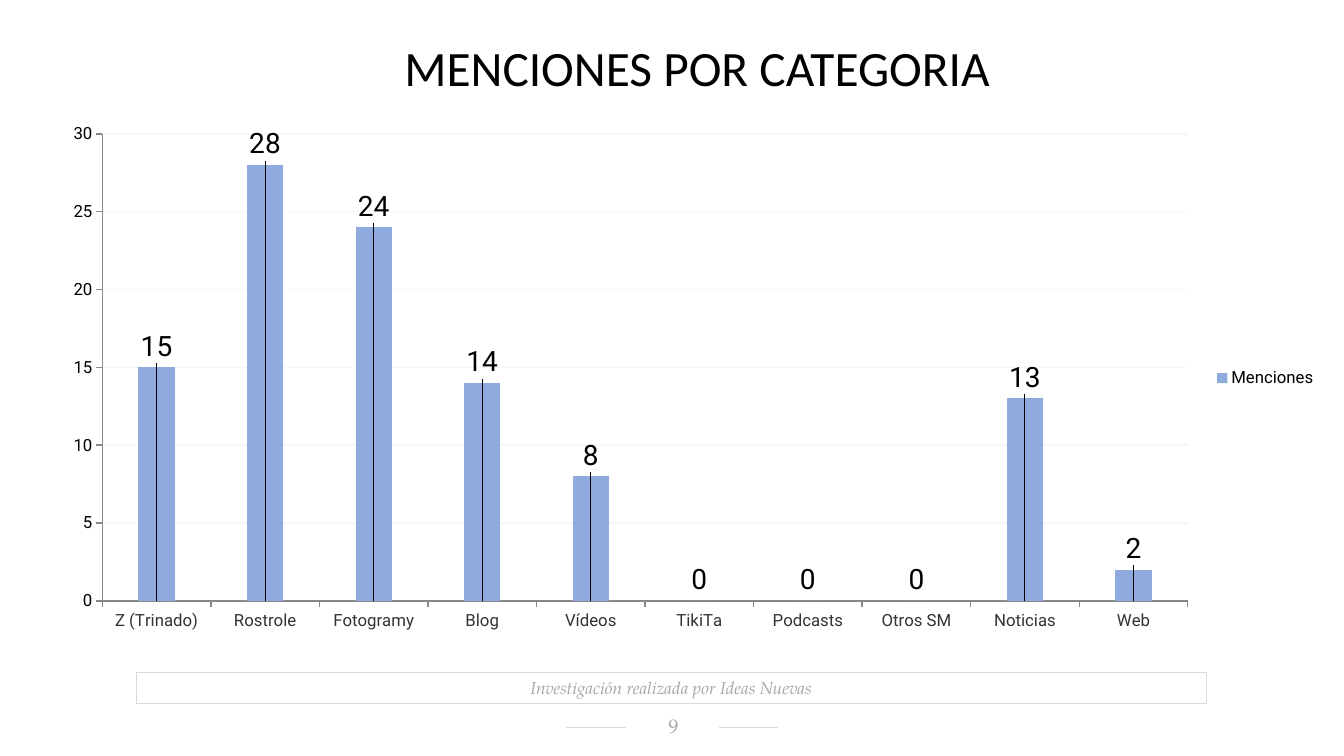
from lxml.etree import SubElement
from pptx import Presentation
from pptx.chart.data import CategoryChartData
from pptx.dml.color import RGBColor
from pptx.enum.chart import (XL_CHART_TYPE as ChartType, XL_LABEL_POSITION as LabelPos,
                             XL_LEGEND_POSITION as LegendPos, XL_TICK_LABEL_POSITION as TickPos,
                             XL_TICK_MARK as TickMark)
from pptx.enum.shapes import MSO_CONNECTOR as Connector, MSO_SHAPE as Shape
from pptx.enum.text import MSO_ANCHOR as Anchor, PP_ALIGN as Align
from pptx.oxml import parse_xml
from pptx.oxml.ns import nsdecls, qn
from pptx.util import Pt

SERIF = "TeX Gyre Pagella"
BLACK, GREY, RULE = "000000", "A6A6A6", "D9D9D9"
MENTIONS = {"Z (Trinado)": 15, "Rostrole": 28, "Fotogramy": 24, "Blog": 14, "Vídeos": 8,
            "TikiTa": 0, "Podcasts": 0, "Otros SM": 0, "Noticias": 13, "Web": 2}
AXIS_MAX = 30
PLOT_AREA = {"x": 0.043, "y": 0.038, "w": 0.848, "h": 0.884}  # shares of the chart box


def color(hex_code):
    return RGBColor.from_string(hex_code)


def style_font(font, size, name, hex_code, italic=None):
    font.size, font.name, font.italic = Pt(size), name, italic
    font.color.rgb = color(hex_code)


def style_line(line, hex_code, width):
    line.color.rgb = color(hex_code)
    line.width = Pt(width)


def write(box, text, size, name, hex_code, italic=None, anchor=Anchor.MIDDLE, indent=0):
    frame = box.text_frame
    frame.word_wrap = True
    frame.vertical_anchor = anchor
    para = frame.paragraphs[0]
    para.alignment = Align.CENTER
    if indent:
        properties = para._p.get_or_add_pPr()
        properties.set("marL", str(Pt(indent)))
        properties.set("indent", "0")
    span = para.add_run()
    span.text = text
    style_font(span.font, size, name, hex_code, italic)


def manual_layout(**shares):
    """Chart layout from shares of the chart box."""
    layout = parse_xml(f"<c:layout {nsdecls('c')}><c:manualLayout/></c:layout>")
    manual = layout[0]
    if "w" in shares:
        SubElement(manual, qn("c:layoutTarget")).set("val", "inner")
        for mode in ("xMode", "yMode"):
            SubElement(manual, qn(f"c:{mode}")).set("val", "edge")
    for key, share in shares.items():
        SubElement(manual, qn(f"c:{key}")).set("val", f"{share:.4f}")
    return layout


def add_title(page, left, top, width, height):
    box = page.shapes.add_textbox(Pt(left), Pt(top), Pt(width), Pt(height))
    write(box, "MENCIONES POR CATEGORIA", 35.3, "Calibri", BLACK, anchor=Anchor.TOP, indent=36)


def style_axis(axis, hex_code):
    axis.major_tick_mark, axis.minor_tick_mark = TickMark.OUTSIDE, TickMark.NONE
    style_font(axis.tick_labels.font, 12, "Roboto", hex_code)
    style_line(axis.format.line, "888888", 1)


def add_mentions_chart(page, left, top, width, height):
    data = CategoryChartData(number_format="0")
    data.categories = list(MENTIONS)
    data.add_series("Menciones", list(MENTIONS.values()))
    chart = page.shapes.add_chart(ChartType.COLUMN_STACKED, Pt(left), Pt(top),
                                  Pt(width), Pt(height), data).chart
    chart.has_title = False
    style_font(chart.font, 10, "Calibri", BLACK)

    # Axes
    categories, values = chart.category_axis, chart.value_axis
    style_axis(categories, "333333")
    categories.tick_label_position = TickPos.LOW
    categories.has_major_gridlines = False
    style_axis(values, BLACK)
    values.minimum_scale, values.maximum_scale, values.major_unit = 0, AXIS_MAX, 5
    values.tick_labels.number_format = "0"
    values.tick_labels.number_format_is_linked = False
    style_line(values.major_gridlines.format.line, "F4F6F8", 1)

    # Legend
    chart.has_legend = True
    chart.legend.position = LegendPos.RIGHT
    chart.legend.include_in_layout = False
    style_font(chart.legend.font, 12, "Roboto", BLACK)

    # Columns
    plot = chart.plots[0]
    plot.vary_by_categories = False
    plot.gap_width, plot.overlap = 200, 100
    series = plot.series[0]
    series.format.fill.solid()
    series.format.fill.fore_color.rgb = color("8FAADC")

    # Value labels, each raised from the base to the top of its column
    labels = series.data_labels
    labels.show_value = True
    labels.position = LabelPos.INSIDE_BASE
    style_font(labels.font, 20, "Roboto", BLACK)
    for index, value in enumerate(MENTIONS.values()):
        if value:
            label = series.points[index].data_label
            style_font(label.font, 20, "Roboto", BLACK)
            label.position = LabelPos.INSIDE_BASE
    counts = list(MENTIONS.values())
    for element in list(plot._element.iter(qn("c:dLbl"))):
        index = element.find(qn("c:idx"))
        rise = counts[int(index.get("val"))] / AXIS_MAX * PLOT_AREA["h"]
        index.addnext(manual_layout(x=0, y=-rise))

    # Plot area
    area = plot._element.getparent()
    for layout in area.findall(qn("c:layout")):
        area.remove(layout)
    area.insert(0, manual_layout(**PLOT_AREA))


def add_credit(page, left, top, width, height):
    box = page.shapes.add_shape(Shape.RECTANGLE, Pt(left), Pt(top), Pt(width), Pt(height))
    box.shadow.inherit = False
    box.fill.background()
    style_line(box.line, RULE, 0.75)
    write(box, "Investigación realizada por Ideas Nuevas", 12.3, SERIF, GREY, italic=True)


def add_page_number(page, left, top, width, height):
    rule_width, number_width = 42.5, 67.7
    middle = top + height / 2
    for start in (left, left + width - rule_width):
        rule = page.shapes.add_connector(Connector.STRAIGHT, Pt(start), Pt(middle),
                                         Pt(start + rule_width), Pt(middle))
        style_line(rule.line, RULE, 0.5)
        SubElement(rule._element.spPr, qn("a:effectLst"))
    box = page.shapes.add_textbox(Pt(left + (width - number_width) / 2 + 0.2), Pt(top),
                                  Pt(number_width), Pt(height))
    frame = box.text_frame
    frame.margin_left, frame.margin_top = Pt(8.6), Pt(1.4)
    frame.margin_right, frame.margin_bottom = Pt(7.2), Pt(3.6)
    write(box, "9", 14.1, SERIF, GREY)


def main():
    deck = Presentation()
    deck.slide_width, deck.slide_height = Pt(960), Pt(540)
    page = deck.slides.add_slide(deck.slide_layouts[6])
    add_title(page, 0, 23, 960, 50.4)
    add_mentions_chart(page, 33.8, 81.4, 914.4, 377.3)
    add_credit(page, 97.2, 480.2, 764.6, 22.3)
    add_page_number(page, 404.6, 511.2, 151.2, 16.6)
    deck.save("out.pptx")


if __name__ == "__main__":
    main()
